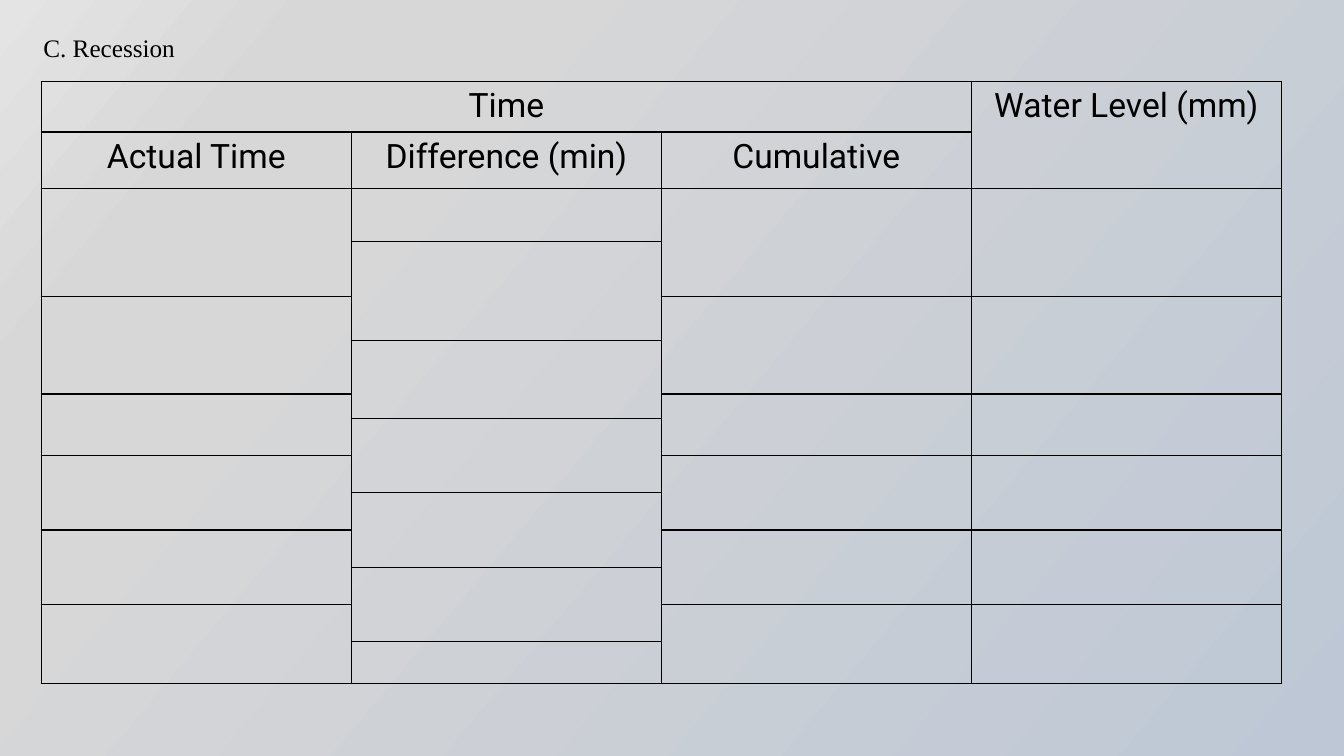
import pptx
import pptx.dml.color
import pptx.enum.text
import pptx.oxml
import pptx.oxml.ns
import pptx.util

Inches = pptx.util.Inches
Pt = pptx.util.Pt


def add_xml(parent, markup):
    """Append a DrawingML element, written with the a: prefix, to parent."""
    tag, rest = markup.split(" ", 1)
    namespace = pptx.oxml.ns.nsdecls("a")
    parent.append(pptx.oxml.parse_xml(f"{tag} {namespace} {rest}"))


def write(paragraph, text, size, font_name):
    run = paragraph.add_run()
    run.text = text
    run.font.size = Pt(size)
    run.font.name = font_name
    run.font.color.rgb = pptx.dml.color.RGBColor.from_string("000000")


presentation = pptx.Presentation()
presentation.slide_width = Inches(13.33)
presentation.slide_height = Inches(7.5)
slide = presentation.slides.add_slide(presentation.slide_layouts[5])

# Background gradient
background_fill = slide.background.fill
background_fill.gradient()
background_fill.gradient_angle = 140
stops = slide.background._cSld.find(".//" + pptx.oxml.ns.qn("a:gsLst"))
for stop in list(stops):
    stops.remove(stop)
for percent, color in [(0, "BDC7D5"), (74, "D7D7D7"), (83, "D7D7D7"), (100, "E4E4E4")]:
    add_xml(stops, f'<a:gs pos="{percent * 1000}"><a:srgbClr val="{color}"/></a:gs>')

# Title
title = slide.shapes.title
title.left, title.top = Inches(0.33), Inches(0.27)
title.width, title.height = Inches(6.67), Inches(0.4)
title.text_frame.vertical_anchor = pptx.enum.text.MSO_ANCHOR.TOP
title.text_frame.word_wrap = True
title_paragraph = title.text_frame.paragraphs[0]
title_paragraph.alignment = pptx.enum.text.PP_ALIGN.LEFT
write(title_paragraph, "C. Recession", 18, "Times New Roman")

# Recession table
row_heights = [0.5, 0.56, 0.53, 0.54, 0.44, 0.53, 0.24] + [0.37] * 6 + [0.41]
column_count = 4
table_shape = slide.shapes.add_table(
    len(row_heights), column_count,
    Inches(0.41), Inches(0.81), Inches(12.3), Inches(sum(row_heights)),
)
table = table_shape.table
table.first_row = False
table.horz_banding = False
for row, height in zip(table.rows, row_heights):
    row.height = Inches(height)
for column in table.columns:
    column.width = Inches(12.3 / column_count)

for cell in table.iter_cells():
    properties = cell._tc.get_or_add_tcPr()
    for side in ("lnL", "lnR", "lnT", "lnB"):
        add_xml(
            properties,
            f'<a:{side} w="12700"><a:solidFill><a:srgbClr val="000000"/>'
            f"</a:solidFill></a:{side}>",
        )
    cell.fill.background()

# The difference column is offset by one row from the readings beside it
table.cell(0, 0).merge(table.cell(0, 2))
table.cell(0, 3).merge(table.cell(1, 3))
for column_index, first_row in enumerate([2, 3, 2, 2]):
    for row_index in range(first_row, len(row_heights) - 1, 2):
        table.cell(row_index, column_index).merge(table.cell(row_index + 1, column_index))

headings = [
    (0, 0, "Time"),
    (0, 3, "Water Level (mm)"),
    (1, 0, "Actual Time"),
    (1, 1, "Difference (min)"),
    (1, 2, "Cumulative"),
]
for row_index, column_index, heading in headings:
    paragraph = table.cell(row_index, column_index).text_frame.paragraphs[0]
    paragraph.alignment = pptx.enum.text.PP_ALIGN.CENTER
    write(paragraph, heading, 24, "Roboto")

presentation.save("out.pptx")
